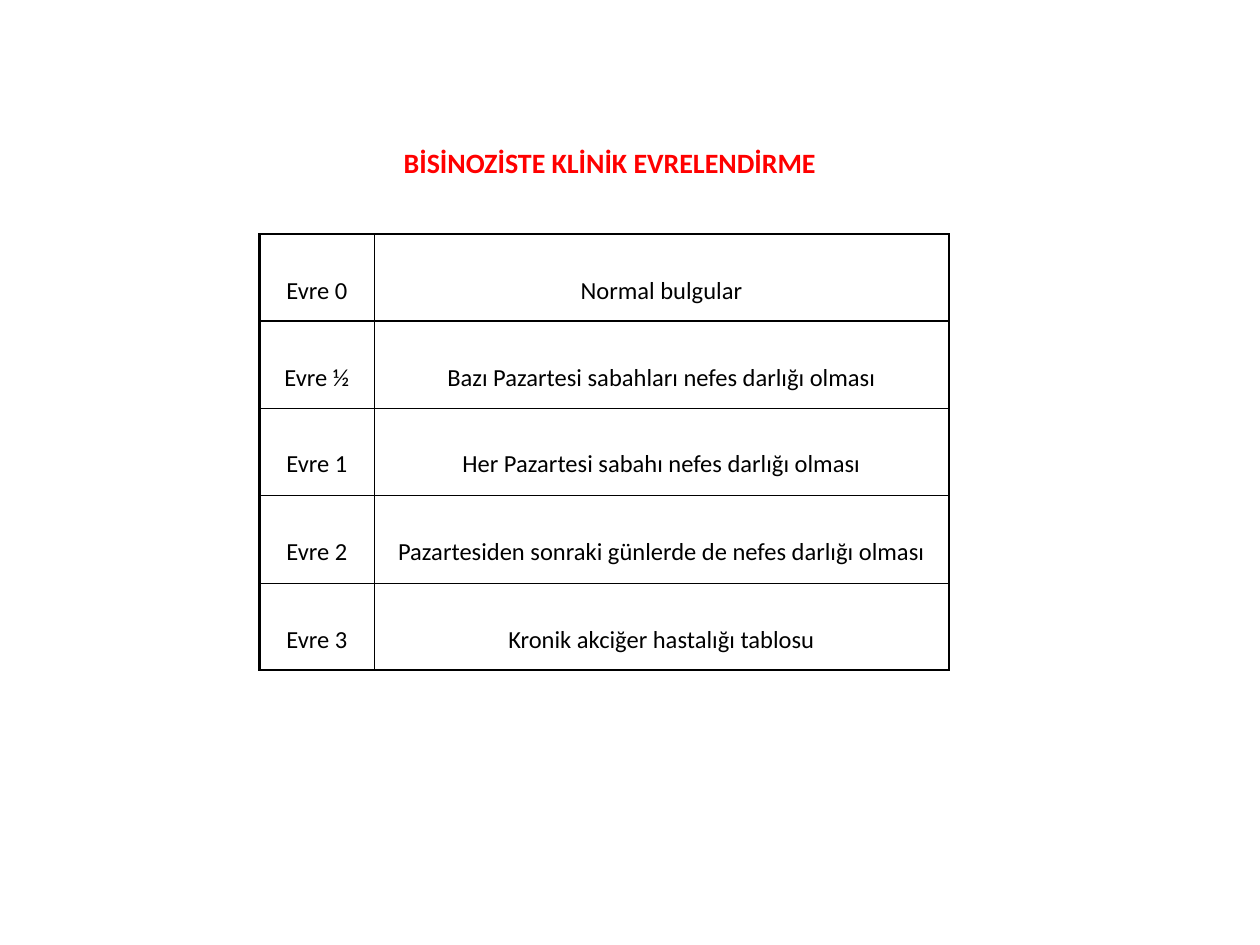
import pptx
import pptx.dml.color
import pptx.enum.text
import pptx.oxml
import pptx.oxml.ns
import pptx.util

Inches = pptx.util.Inches
Pt = pptx.util.Pt

STAGES = [
    ("Evre 0", "Normal bulgular"),
    ("Evre ½", "Bazı Pazartesi sabahları nefes darlığı olması"),
    ("Evre 1", "Her Pazartesi sabahı nefes darlığı olması"),
    ("Evre 2", "Pazartesiden sonraki günlerde de nefes darlığı olması"),
    ("Evre 3", "Kronik akciğer hastalığı tablosu"),
]
COLUMN_WIDTHS = [0.91, 4.56]
ROW_HEIGHTS = [0.69, 0.69, 0.69, 0.7, 0.69]
THICK, THIN = 1.5, 0.75


def rgb(color):
    return pptx.dml.color.RGBColor.from_string(color)


def write_text(frame, text, size=14, color="000000", bold=False,
               line_spacing=None, space_after=None):
    paragraph = frame.paragraphs[0]
    paragraph.alignment = pptx.enum.text.PP_ALIGN.CENTER
    if line_spacing is not None:
        paragraph.line_spacing = line_spacing
    if space_after is not None:
        paragraph.space_after = Pt(space_after)
    run = paragraph.add_run()
    run.text = text
    run.font.name = "Calibri"
    run.font.size = Pt(size)
    run.font.bold = bold
    run.font.color.rgb = rgb(color)


def set_borders(cell, widths, color="000000"):
    """Widths in points: left, right, top, bottom."""
    properties = cell._tc.get_or_add_tcPr()
    for index, (side, width) in enumerate(zip("LRTB", widths)):
        properties.insert(index, pptx.oxml.parse_xml(
            f'<a:ln{side} {pptx.oxml.ns.nsdecls("a")} w="{Pt(width)}">'
            f'<a:solidFill><a:srgbClr val="{color}"/></a:solidFill>'
            f'</a:ln{side}>'))


def add_title(slide, text):
    box = slide.shapes.add_textbox(
        Inches(1.25), Inches(1.1), Inches(7.18), Inches(0.37))
    frame = box.text_frame
    frame.word_wrap = True
    frame.auto_size = pptx.enum.text.MSO_AUTO_SIZE.SHAPE_TO_FIT_TEXT
    frame.vertical_anchor = pptx.enum.text.MSO_ANCHOR.MIDDLE
    write_text(frame, text, size=16, color="FF0000", bold=True)


def add_stage_table(slide):
    table = slide.shapes.add_table(
        len(STAGES), len(COLUMN_WIDTHS), Inches(2.06), Inches(1.86),
        Inches(sum(COLUMN_WIDTHS)), Inches(sum(ROW_HEIGHTS))).table
    table.first_row = False
    table.horz_banding = False
    for column, width in zip(table.columns, COLUMN_WIDTHS):
        column.width = Inches(width)
    for row, height in zip(table.rows, ROW_HEIGHTS):
        row.height = Inches(height)

    # The frame and the rule below the first stage are thick
    row_rules = [THICK, THICK] + [THIN] * (len(STAGES) - 2) + [THICK]
    column_rules = [THICK, THIN, THICK]
    for i, stage in enumerate(STAGES):
        for j, text in enumerate(stage):
            cell = table.cell(i, j)
            cell.fill.background()
            cell.vertical_anchor = pptx.enum.text.MSO_ANCHOR.MIDDLE
            cell.margin_left = cell.margin_right = Inches(0.07)
            cell.margin_top = Inches(0.17)
            cell.margin_bottom = 0
            set_borders(cell, column_rules[j:j + 2] + row_rules[i:i + 2])
            write_text(cell.text_frame, text, line_spacing=1.15, space_after=10)


def main():
    presentation = pptx.Presentation()
    presentation.slide_width = Inches(10)
    presentation.slide_height = Inches(7.5)
    slide = presentation.slides.add_slide(presentation.slide_layouts[6])
    slide.background.fill.solid()
    slide.background.fill.fore_color.rgb = rgb("FFFFFF")
    add_stage_table(slide)
    add_title(slide, "BİSİNOZİSTE KLİNİK EVRELENDİRME")
    presentation.save("out.pptx")


if __name__ == "__main__":
    main()
